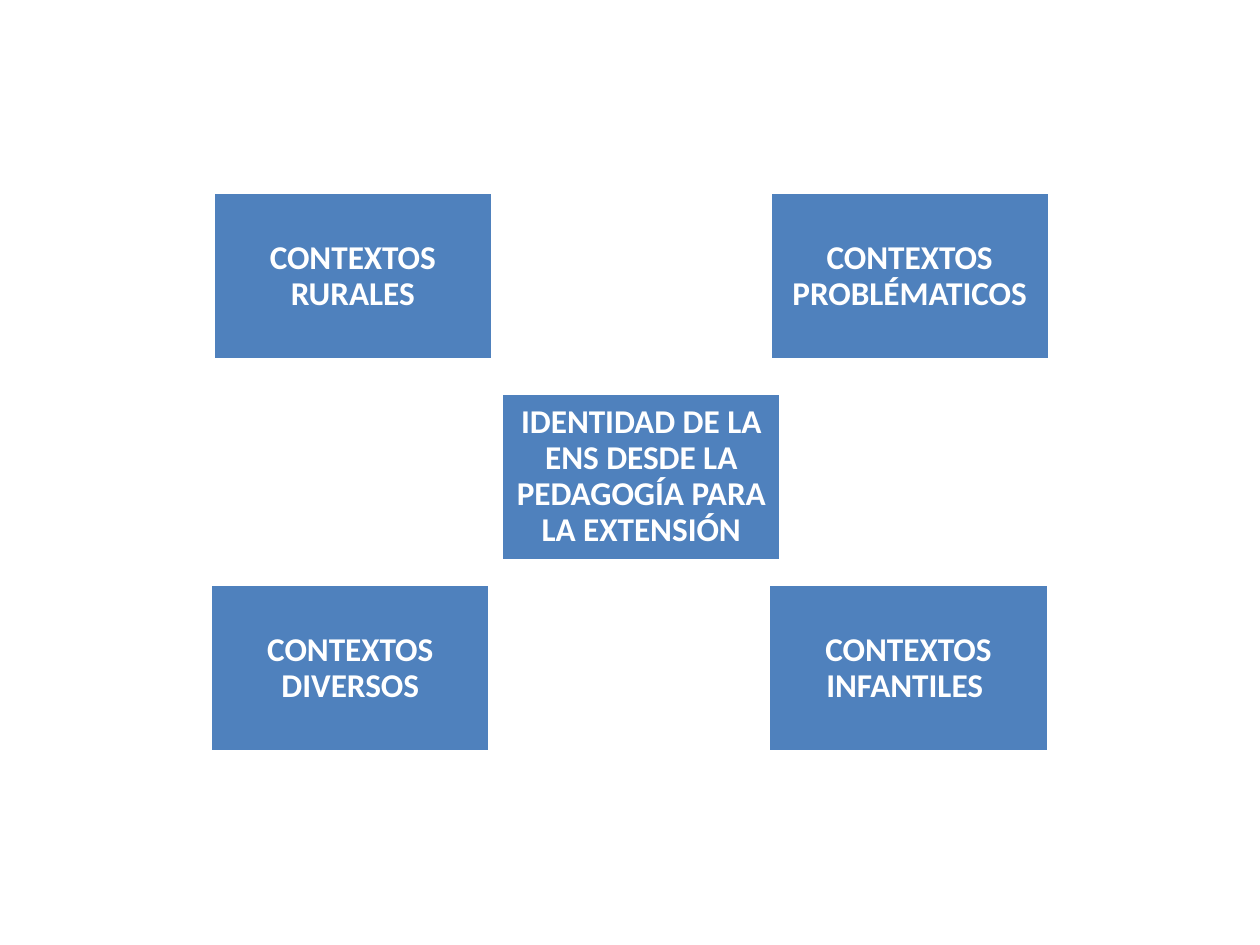
"""Builds a slide with a central identity box and four context boxes around it."""
import pptx
import pptx.dml.color
import pptx.enum.shapes
import pptx.enum.text
import pptx.util
from pptx.util import Inches

COLORS = {"box": "4F81BD", "white": "FFFFFF"}
BOX_WIDTH, BOX_HEIGHT = 2.22, 1.33
TOP_ROW, CENTER_ROW, BOTTOM_ROW = 1.53, 3.12, 4.64
BOXES = [
    ("CONTEXTOS RURALES", 1.69, TOP_ROW),
    ("CONTEXTOS PROBLÉMATICOS", 6.11, TOP_ROW),
    ("CONTEXTOS DIVERSOS", 1.67, BOTTOM_ROW),
    ("CONTEXTOS INFANTILES ", 6.1, BOTTOM_ROW),
    ("IDENTIDAD DE LA ENS DESDE LA PEDAGOGÍA PARA LA EXTENSIÓN", 3.98, CENTER_ROW),
]


def color(name):
    return pptx.dml.color.RGBColor.from_string(COLORS[name])


def add_box(page, text, left, top):
    box = page.shapes.add_shape(
        pptx.enum.shapes.MSO_SHAPE.RECTANGLE,
        Inches(left), Inches(top), Inches(BOX_WIDTH), Inches(BOX_HEIGHT),
    )
    box.shadow.inherit = False
    box.fill.solid()
    box.fill.fore_color.rgb = color("box")
    box.line.color.rgb = color("white")
    box.line.width = pptx.util.Pt(2)
    write_label(box.text_frame, text)


def write_label(frame, text):
    frame.text = text
    frame.word_wrap = True
    frame.vertical_anchor = pptx.enum.text.MSO_ANCHOR.MIDDLE
    frame.margin_left = frame.margin_right = Inches(0.08)
    frame.margin_top = frame.margin_bottom = Inches(0.08)
    para = frame.paragraphs[0]
    para.alignment = pptx.enum.text.PP_ALIGN.CENTER
    para.line_spacing = 0.9
    span = para.runs[0]
    span.font.name = "Calibri"
    span.font.size = pptx.util.Pt(19)
    span.font.bold = True
    span.font.color.rgb = color("white")


def main():
    deck = pptx.Presentation()
    deck.slide_width, deck.slide_height = Inches(10), Inches(7.5)
    page = deck.slides.add_slide(deck.slide_layouts.get_by_name("Blank"))
    for text, left, top in BOXES:
        add_box(page, text, left, top)
    deck.save("out.pptx")


if __name__ == "__main__":
    main()
